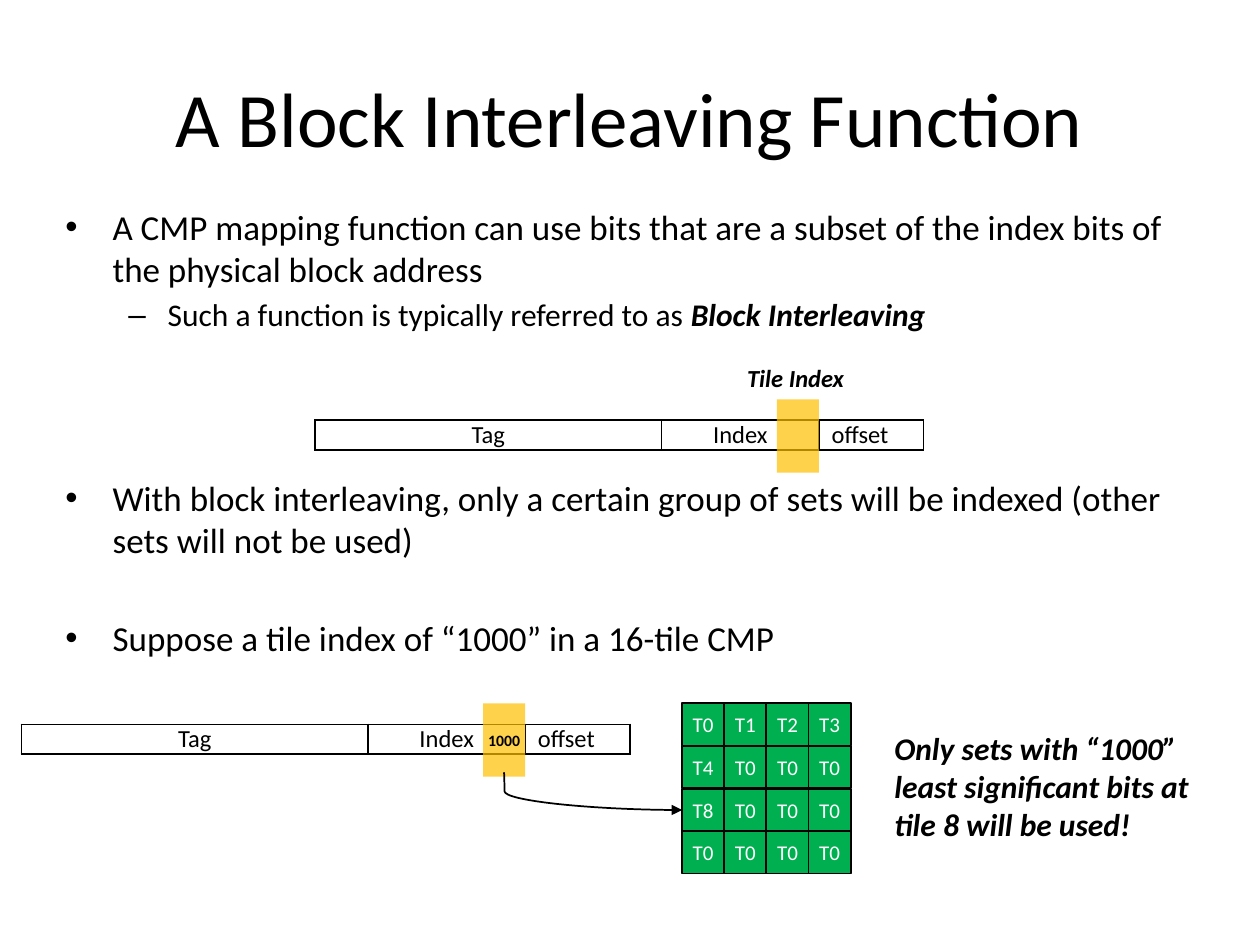
from lxml.etree import SubElement
from pptx import Presentation
from pptx.dml.color import RGBColor
from pptx.enum.shapes import MSO_CONNECTOR, MSO_SHAPE
from pptx.enum.text import MSO_ANCHOR, PP_ALIGN
from pptx.oxml.ns import qn
from pptx.util import Cm, Pt

BLACK, WHITE, GREEN, AMBER = "000000", "FFFFFF", "00B050", "FFC000"
FIELDS = [("Tag", 6.99, PP_ALIGN.CENTER), ("Index", 3.17, PP_ALIGN.CENTER),
          ("offset", 2.11, PP_ALIGN.LEFT)]
TILES = [["T0", "T1", "T2", "T3"],
         ["T4", "T0", "T0", "T0"],
         ["T8", "T0", "T0", "T0"],
         ["T0", "T0", "T0", "T0"]]
TILE = 0.85


def color(value):
    return RGBColor.from_string(value)


def write(para, text, size=14, ink=BLACK, bold=False, italic=False,
          align=PP_ALIGN.LEFT):
    para.alignment = align
    span = para.add_run()
    span.text = text
    font = span.font
    font.name, font.size = "Calibri", Pt(size)
    font.bold, font.italic = bold, italic
    font.color.rgb = color(ink)


def add_box(slide, left, top, width, height, wrap=True):
    box = slide.shapes.add_textbox(Cm(left), Cm(top), Cm(width), Cm(height))
    box.text_frame.word_wrap = wrap
    return box.text_frame


def add_bullet(para, mark, margin, hanging, before):
    para.space_before = Pt(before)
    props = para._p.get_or_add_pPr()
    props.set("marL", str(Cm(margin)))
    props.set("indent", str(-Cm(hanging)))
    SubElement(props, qn("a:buFont"), typeface="Arial")
    SubElement(props, qn("a:buChar"), char=mark)


def add_block(slide, left, top, width, height, fill, line=None):
    """Add a plain rectangle with narrow text margins."""
    block = slide.shapes.add_shape(MSO_SHAPE.RECTANGLE, Cm(left), Cm(top),
                                   Cm(width), Cm(height))
    block.shadow.inherit = False
    block.fill.solid()
    block.fill.fore_color.rgb = color(fill)
    if line:
        block.line.color.rgb = color(line)
        block.line.width = Pt(1)
    else:
        block.line.fill.background()
    frame = block.text_frame
    frame.margin_left = frame.margin_right = 0
    frame.vertical_anchor = MSO_ANCHOR.MIDDLE
    return block


def outline_cell(cell):
    props = cell._tc.get_or_add_tcPr()
    for side in ("lnL", "lnR", "lnT", "lnB"):
        line = SubElement(props, qn(f"a:{side}"), w=str(Pt(1)))
        SubElement(SubElement(line, qn("a:solidFill")), qn("a:srgbClr"), val=BLACK)


def add_address(slide, left, top, tile_bits=""):
    """Add the address fields with the tile index bits highlighted."""
    width = sum(field[1] for field in FIELDS)
    table = slide.shapes.add_table(1, len(FIELDS), Cm(left), Cm(top),
                                   Cm(width), Cm(0.6)).table
    table.first_row = table.horz_banding = False
    for column, (name, column_width, align) in enumerate(FIELDS):
        table.columns[column].width = Cm(column_width)
        cell = table.cell(0, column)
        cell.margin_top = cell.margin_bottom = 0
        outline_cell(cell)
        cell.fill.background()
        write(cell.text_frame.paragraphs[0], name, align=align)

    highlight = add_block(slide, left + 9.31, top - 0.42, TILE, 1.48, AMBER)
    tint = highlight._element.spPr.find(qn("a:solidFill"))[0]
    SubElement(tint, qn("a:alpha"), val="70000")
    if tile_bits:
        write(highlight.text_frame.paragraphs[0], tile_bits, size=9, bold=True,
              align=PP_ALIGN.CENTER)


def add_tiles(slide, left, top):
    for row, names in enumerate(TILES):
        for column, name in enumerate(names):
            tile = add_block(slide, left + column * TILE, top + row * 0.86,
                             TILE, TILE, GREEN, BLACK)
            write(tile.text_frame.paragraphs[0], name, size=12, ink=WHITE,
                  align=PP_ALIGN.CENTER)


def add_curved_arrow(slide, start_x, start_y, end_x, end_y):
    arrow = slide.shapes.add_connector(MSO_CONNECTOR.CURVE, Cm(start_x), Cm(start_y),
                                       Cm(end_x), Cm(end_y))
    arrow.line.color.rgb = color(BLACK)
    arrow.line.width = Pt(1)
    props = arrow._element.spPr
    guides = props.find(qn("a:prstGeom")).find(qn("a:avLst"))
    SubElement(guides, qn("a:gd"), name="adj1", fmla="val 300")
    SubElement(props.find(qn("a:ln")), qn("a:tailEnd"), type="triangle")
    SubElement(props, qn("a:effectLst"))


def add_points(slide):
    frame = add_box(slide, 1.07, 4.01, 23.5, 14.17)
    main = {"mark": "•", "margin": 0.95, "hanging": 0.95}
    sub = {"mark": "–", "margin": 2.06, "hanging": 0.79}
    points = [
        ("A CMP mapping function can use bits that are a subset of the index bits of "
         "the physical block address", 20, main, 1),
        ("Such a function is typically referred to as ", 18, sub, 3.5),
        ("With block interleaving, only a certain group of sets will be indexed (other "
         "sets will not be used)", 20, main, 82),
        ("Suppose a tile index of “1000” in a 16-tile CMP", 20, main, 32),
    ]
    for number, (text, size, bullet, before) in enumerate(points):
        para = frame.add_paragraph() if number else frame.paragraphs[0]
        write(para, text, size=size)
        add_bullet(para, before=before, **bullet)
    write(frame.paragraphs[1], "Block Interleaving", size=18, bold=True, italic=True)


def add_note(slide):
    frame = add_box(slide, 17.78, 14.58, 6.65, 2.57, wrap=False)
    lines = ["Only sets with “1000”", "least significant bits at",
             "tile 8 will be used!"]
    for number, text in enumerate(lines):
        para = frame.add_paragraph() if number else frame.paragraphs[0]
        write(para, text, size=18, bold=True, italic=True)


def main():
    deck = Presentation()
    deck.slide_width, deck.slide_height = Cm(25.4), Cm(19.05)
    slide = deck.slides.add_slide(deck.slide_layouts[6])

    title = add_box(slide, 1.27, 0.76, 22.86, 3.18)
    title.vertical_anchor = MSO_ANCHOR.MIDDLE
    write(title.paragraphs[0], "A Block Interleaving Function", size=44,
          align=PP_ALIGN.CENTER)
    add_points(slide)

    add_address(slide, 6.35, 8.47)
    label = add_box(slide, 14.81, 7.19, 2.49, 0.86, wrap=False)
    write(label.paragraphs[0], "Tile Index", bold=True, italic=True)

    add_tiles(slide, 13.75, 14.18)
    add_address(slide, 0.43, 14.6, tile_bits="1000")
    add_curved_arrow(slide, 10.16, 15.57, 13.75, 16.33)
    add_note(slide)
    deck.save("out.pptx")


if __name__ == "__main__":
    main()
